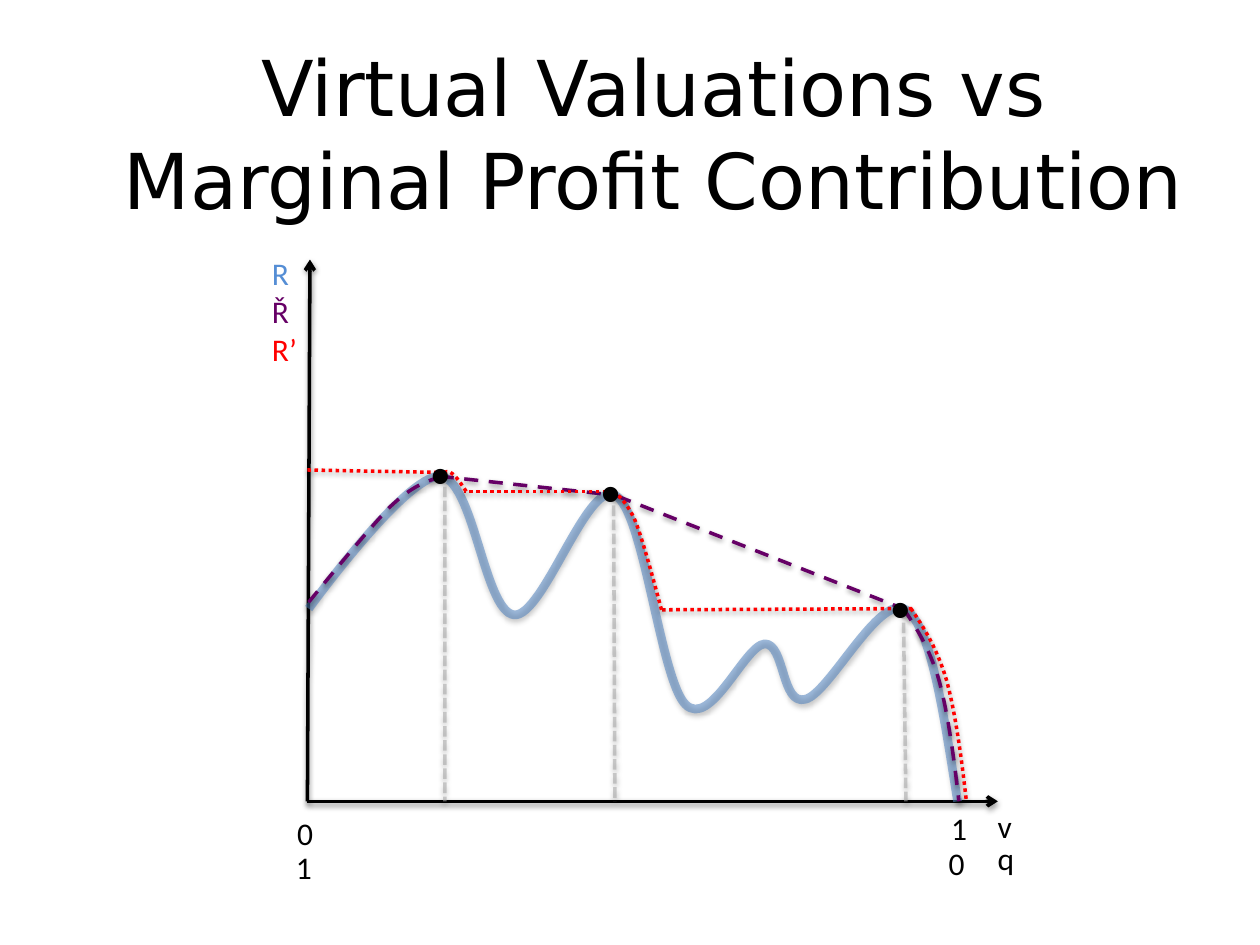
from lxml import etree
from pptx import Presentation
from pptx.dml.color import RGBColor
from pptx.enum.dml import MSO_LINE
from pptx.enum.shapes import MSO_CONNECTOR
from pptx.enum.text import MSO_ANCHOR, MSO_AUTO_SIZE, PP_ALIGN
from pptx.oxml.ns import qn
from pptx.util import Inches, Pt

STRAIGHT = MSO_CONNECTOR.STRAIGHT
DASH, DOT, SHORT_DASH = MSO_LINE.DASH, MSO_LINE.ROUND_DOT, MSO_LINE.SQUARE_DOT
MIDDLE, TOP = MSO_ANCHOR.MIDDLE, MSO_ANCHOR.TOP
CENTER, LEFT = PP_ALIGN.CENTER, PP_ALIGN.LEFT
GROW = MSO_AUTO_SIZE.SHAPE_TO_FIT_TEXT

BLACK = RGBColor(0, 0, 0)
BLUE = RGBColor(0x4F, 0x81, 0xBD)
LIGHT_BLUE = RGBColor(0x55, 0x8E, 0xD5)
PURPLE = RGBColor(0x66, 0, 0x66)
RED = RGBColor(0xFF, 0, 0)
GRAY = RGBColor(0xA6, 0xA6, 0xA6)

CELL = 0.1  # inches per grid column and row
PLOT_BOX = (2.44, 2.06, 54.8, 43)  # left, top in inches; columns, rows
TITLE_BOX = (0.69, 0.26, 90, 15.8)

# Points are (column, row) in the plot; curves are cubic Bezier chains
REVENUE = [(51.6, 43), (50.5, 36.1), (49.5, 29.1), (47.5, 27.8),
           (45.4, 26.4), (41.4, 34.5), (39.5, 34.9),
           (37.6, 35.4), (37.9, 30.5), (36.3, 30.5),
           (34.7, 30.6), (32, 37.3), (30, 35.3),
           (28, 33.3), (26.7, 19.8), (24.4, 18.7),
           (22.2, 17.5), (18.7, 28.4), (16.4, 28.2),
           (14, 27.9), (13.2, 17.3), (10.5, 17.2),
           (7.8, 17.1), (0.1, 27.7), (0.1, 27.7)]
FINAL_FALL = [(47.3, 27.7), (48.3, 29.2), (49.3, 30.7), (50.1, 33.3),
              (50.8, 35.8), (51.3, 39.4), (51.7, 43)]
FIRST_RISE = [(10.7, 17.2), (9.5, 17.6), (8.4, 17.9), (6.6, 19.6),
              (4.9, 21.3), (0.1, 27.2), (0.1, 27.2)]
MIDDLE_FALL = [(28.1, 27.8), (27.4, 25.2), (26.6, 22.2), (26, 20.7),
               (25.3, 19.1), (24.3, 18.4), (24.3, 18.4)]
FIRST_FALL = [(12.6, 18.4), (12.2, 17.8), (11.8, 17.2), (11.5, 17),
              (11.2, 16.7), (10.9, 16.9), (10.9, 16.9)]
HULL_LINES = [((10.5, 17.2), (24.4, 18.7)), ((47.5, 27.8), (24.4, 18.7))]
STEP_LINES = [((48, 27.7), (28, 27.8)), ((24.3, 18.4), (12.4, 18.4)),
              ((10.9, 16.9), (0, 16.7))]
GUIDE_LINES = [((10.9, 16.9), (10.9, 43)), ((24.3, 18.4), (24.4, 43)),
               ((47.3, 27.7), (47.5, 43))]
PEAK_DOTS = [(8.8, 13.8), (22.3, 15.2), (45.3, 24.4)]
AXIS_LABELS = [("v", 53.8, 43, 4.5), ("q", 53.8, 45.5, 4.5),
               ("0", -1.8, 43.5, 3.3), ("1", 50.1, 43.1, 3.3),
               ("1", -1.9, 46.2, 3.3), ("0", 49.9, 45.9, 3.3)]


def place(box, point):
    """Turn a grid point of the box into slide lengths."""
    return tuple(Inches(start + CELL * step) for start, step in zip(box, point))


def style_line(shape, color, width=2, dash=None, alpha=None, arrow=None):
    line = shape.line
    line.color.rgb = color
    for name, value in {"width": Pt(width), "dash_style": dash}.items():
        setattr(line, name, value)
    properties = shape._element.spPr
    outline = properties.find(qn("a:ln"))
    if alpha:
        fill_color = outline.find(".//" + qn("a:srgbClr"))
        etree.SubElement(fill_color, qn("a:alpha"), val=str(alpha * 1000))
    if arrow:
        etree.SubElement(outline, qn("a:" + arrow), type="arrow")
    # Soft shadow straight below the line
    effects = etree.SubElement(properties, qn("a:effectLst"))
    shadow = etree.SubElement(effects, qn("a:outerShdw"), blurRad=str(Pt(3.1)),
                              dist=str(Pt(1.6)), dir="5400000", rotWithShape="0")
    shadow_color = etree.SubElement(shadow, qn("a:srgbClr"), val="000000")
    etree.SubElement(shadow_color, qn("a:alpha"), val="38000")


def add_line(shapes, box, ends, color, **style):
    start, end = ends
    connector = shapes.add_connector(STRAIGHT, *place(box, start), *place(box, end))
    style_line(connector, color, **style)


def add_curve(shapes, box, chain, color, **style):
    builder = shapes.build_freeform(*place(box, chain[0]))
    builder.add_line_segments([place(box, point) for point in chain[1:]], close=False)
    curve = builder.convert_to_shape()
    # Join every three line points into one cubic segment
    segments = list(curve._element.iter(qn("a:lnTo")))
    outline = segments[0].getparent()
    for first in range(0, len(segments), 3):
        cubic = etree.SubElement(outline, qn("a:cubicBezTo"))
        for segment in segments[first:first + 3]:
            cubic.append(segment[0])
            outline.remove(segment)
    curve.fill.background()
    style_line(curve, color, **style)


def add_text(shapes, box, area, paragraphs, size, font="Calibri", wrap=True,
             align=LEFT, anchor=TOP):
    """Each paragraph is a list of (text, color) lines."""
    column, row, columns, rows = area
    text_box = shapes.add_textbox(*place(box, (column, row)),
                                  Inches(columns * CELL), Inches(rows * CELL))
    frame = text_box.text_frame
    frame_format = {"word_wrap": wrap, "vertical_anchor": anchor, "auto_size": GROW}
    for name, value in frame_format.items():
        setattr(frame, name, value)
    for index, lines in enumerate(paragraphs):
        paragraph = frame.add_paragraph() if index else frame.paragraphs[0]
        paragraph.alignment = align
        for line_index, (text, color) in enumerate(lines):
            if line_index:
                paragraph.add_line_break()
            run = paragraph.add_run()
            run.text = text
            for name, value in {"size": Pt(size), "name": font}.items():
                setattr(run.font, name, value)
            run.font.color.rgb = color


def add_plot(slide, box):
    columns, rows = box[2:]
    shapes = slide.shapes.add_group_shape().shapes

    # Axes and their labels
    add_line(shapes, box, ((0.2, 0), (0, rows)), BLACK, arrow="headEnd")
    add_line(shapes, box, ((0, rows), (columns, rows)), BLACK, arrow="tailEnd")
    add_text(shapes, box, (-3.8, -0.9, 5.2, 10.1),
             [[("R", LIGHT_BLUE)], [("Ř", PURPLE), ("R’", RED)]], 18)
    for text, column, row, width in AXIS_LABELS:
        add_text(shapes, box, (column, row, width, 4), [[(text, BLACK)]], 18,
                 wrap=text in "vq")

    # Revenue curve, its hull and the stepped bound
    add_curve(shapes, box, REVENUE, BLUE, width=5, alpha=55)
    for ends in HULL_LINES:
        add_line(shapes, box, ends, PURPLE, dash=DASH)
    for chain in (FINAL_FALL, FIRST_RISE):
        add_curve(shapes, box, chain, PURPLE, dash=DASH)
    shifted_fall = [(column + 0.6, row) for column, row in FINAL_FALL]
    for ends in STEP_LINES:
        add_line(shapes, box, ends, RED, dash=DOT)
    for chain in (shifted_fall, MIDDLE_FALL, FIRST_FALL):
        add_curve(shapes, box, chain, RED, dash=DOT)

    # Guides and dots at the peaks
    for ends in GUIDE_LINES:
        add_line(slide.shapes, box, ends, GRAY, dash=SHORT_DASH, alpha=57)
    for dot in PEAK_DOTS:
        add_text(slide.shapes, box, (*dot, 4.1, 6.4), [[("•", BLACK)]], 32,
                 font="Arial", wrap=False)


def add_title(slide, box):
    add_text(slide.shapes, box, (0, 0, *box[2:]),
             [[("Virtual Valuations vs", BLACK)],
              [("Marginal Profit Contribution", BLACK)]],
             44, font="DejaVu Sans", align=CENTER, anchor=MIDDLE)


def main():
    presentation = Presentation()
    presentation.slide_width, presentation.slide_height = Inches(10), Inches(7.5)
    slide = presentation.slides.add_slide(presentation.slide_layouts[6])
    add_plot(slide, PLOT_BOX)
    add_title(slide, TITLE_BOX)
    presentation.save("out.pptx")


if __name__ == "__main__":
    main()
